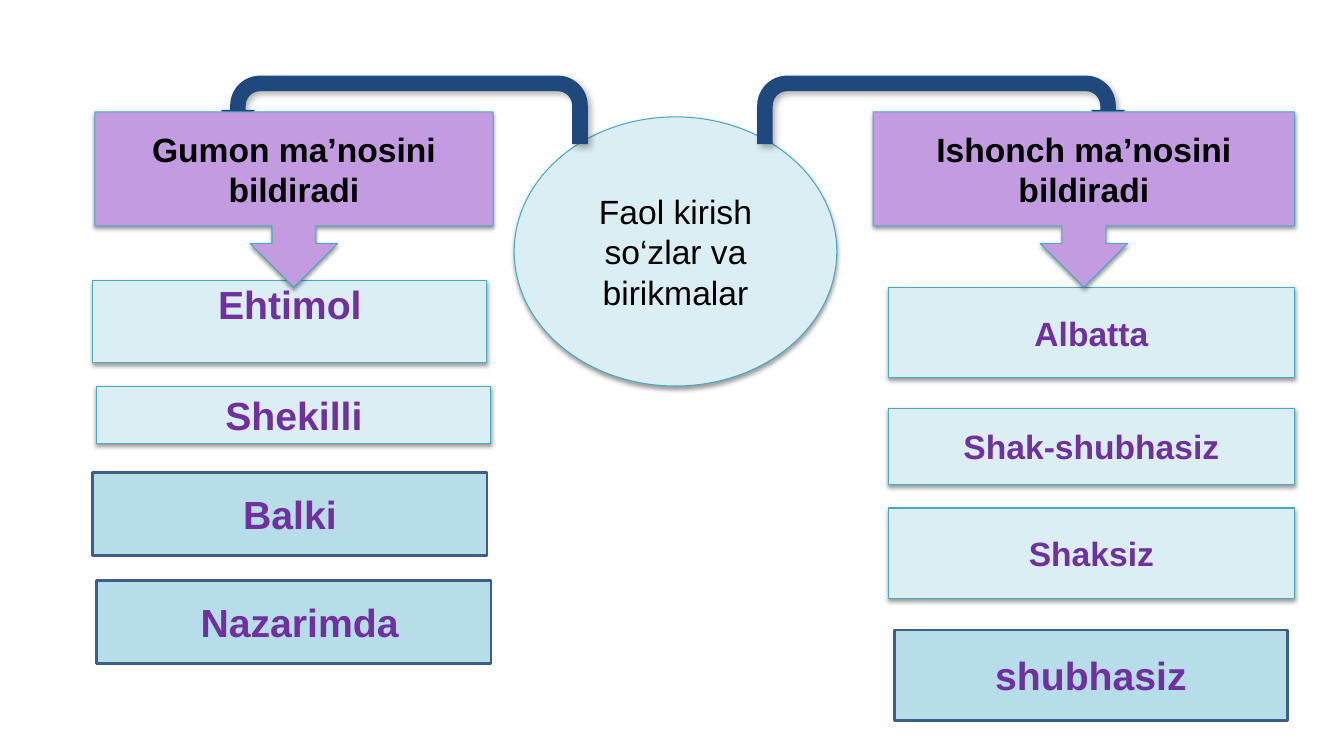
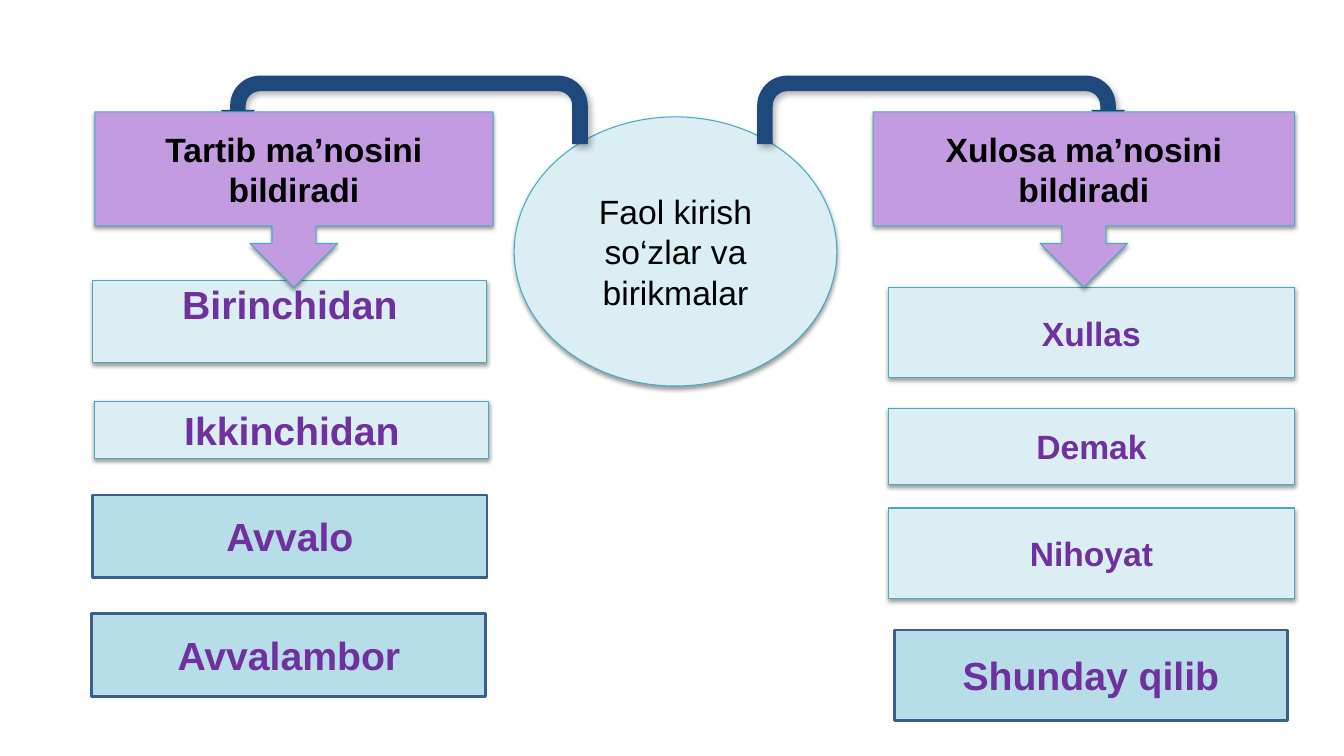
from lxml import etree
from pptx import Presentation
from pptx.dml.color import RGBColor
from pptx.enum.shapes import MSO_SHAPE
from pptx.enum.text import MSO_ANCHOR, PP_ALIGN
from pptx.oxml.ns import qn
from pptx.util import Inches, Pt

RECT, OVAL = MSO_SHAPE.RECTANGLE, MSO_SHAPE.OVAL
U_TURN, CALLOUT = MSO_SHAPE.U_TURN_ARROW, MSO_SHAPE.DOWN_ARROW_CALLOUT
CENTER, MIDDLE, TOP = PP_ALIGN.CENTER, MSO_ANCHOR.MIDDLE, MSO_ANCHOR.TOP

FONT = "Arial"
BLACK, PURPLE, NAVY = "000000", "7030A0", "1F497D"

# Shadow: opacity %, blur pt, distance pt, direction in degrees
SOFT_SHADOW = (38, 3.1, 1.6, 90)
BAND_SHADOW = (30, 4.5, 2.6, 53)

# Look: fill, line colour, line width, shadow
PALE = ("DBEEF4", "46AAC5", 0.75, SOFT_SHADOW)
DEEP = ("B7DEE8", "3A5F8C", 2, None)
LILAC = ("C39BE1", "46AAC5", 0.75, SOFT_SHADOW)
BAND = (NAVY, None, 0, BAND_SHADOW)

HUB_TEXT = "Faol kirish so‘zlar va birikmalar"
HUB = (5.1, 1.16, 3.2, 2.67)
BANDS = [((7.51, 0.75, 3.65, 0.68), False), ((2.19, 0.75, 3.64, 0.68), True)]
BAND_ADJUSTMENTS = (0.227, 0.25, 0.25, 0.438, 0.75)
HEADINGS = [(0.94, 1.11, 3.95, 1.74), (8.66, 1.11, 4.18, 1.74)]

# Word rows: height, look, text size
LEFT_ROWS = [(0.82, PALE, 28), (0.57, PALE, 28), (0.82, DEEP, 28), (0.82, DEEP, 28)]
RIGHT_ROWS = [(0.9, PALE, 24), (0.76, PALE, 24), (0.9, PALE, 24), (0.9, DEEP, 28)]
LEFT_WIDTH = 3.91
RIGHT_PLACES = [(8.81, 2.85), (8.81, 4.05), (8.81, 5.04), (8.87, 6.25)]
RIGHT_WIDTHS = [4.03, 4.03, 4.03, 3.9]

SLIDES = [
    {
        "headings": ["Gumon ma’nosini bildiradi", "Ishonch ma’nosini bildiradi"],
        "left": ["Ehtimol", "Shekilli", "Balki", "Nazarimda"],
        "left_places": [(0.92, 2.78), (0.96, 3.83), (0.92, 4.69), (0.96, 5.76)],
        "last_indent": 0.11,
        "right": ["Albatta", "Shak-shubhasiz", "Shaksiz", "shubhasiz"],
    },
    {
        "headings": ["Tartib ma’nosini bildiradi", "Xulosa ma’nosini bildiradi"],
        "left": ["Birinchidan", "Ikkinchidan", "Avvalo", "Avvalambor"],
        "left_places": [(0.92, 2.78), (0.94, 3.98), (0.92, 4.91), (0.91, 6.09)],
        "last_indent": 0,
        "right": ["Xullas", "Demak", "Nihoyat", "Shunday qilib"],
    },
]


def rgb(value):
    return RGBColor.from_string(value)


def add_shadow(shape, opacity, blur, distance, direction):
    effects = shape._element.spPr.find(qn("a:effectLst"))
    outer = etree.SubElement(
        effects, qn("a:outerShdw"), blurRad=str(Pt(blur)), dist=str(Pt(distance)),
        dir=str(direction * 60000), rotWithShape="0")
    color = etree.SubElement(outer, qn("a:srgbClr"), val=BLACK)
    etree.SubElement(color, qn("a:alpha"), val=str(opacity * 1000))


def add_figure(slide, kind, box, look):
    """Add a preset shape with its fill, line and shadow."""
    fill, line, width, shadow = look
    shape = slide.shapes.add_shape(kind, *map(Inches, box))
    shape.fill.solid()
    shape.fill.fore_color.rgb = rgb(fill)
    if line:
        shape.line.color.rgb = rgb(line)
        shape.line.width = Pt(width)
    else:
        shape.line.fill.background()
    shape.shadow.inherit = False
    if shadow:
        add_shadow(shape, *shadow)
    return shape


def write(shape, text, size, color, bold=True):
    frame = shape.text_frame
    frame.word_wrap = True
    frame.vertical_anchor = MIDDLE
    paragraph = frame.paragraphs[0]
    paragraph.alignment = CENTER
    run = paragraph.add_run()
    run.text = text
    run.font.name, run.font.size, run.font.bold = FONT, Pt(size), bold
    run.font.color.rgb = rgb(color)
    return frame


def add_words(slide, words, places, widths, rows):
    """Add one column of word boxes and return their text frames."""
    frames = []
    for word, place, width, (height, look, size) in zip(words, places, widths, rows):
        word_box = add_figure(slide, RECT, (*place, width, height), look)
        frames.append(write(word_box, word, size, PURPLE))
    return frames


def add_hub(slide):
    hub = add_figure(slide, OVAL, HUB, PALE)
    frame = write(hub, HUB_TEXT, 24, BLACK, bold=False)
    frame.margin_left = frame.margin_right = frame.margin_top = frame.margin_bottom = 0


def add_bands(slide):
    for box, mirrored in BANDS:
        band = add_figure(slide, U_TURN, box, BAND)
        for index, value in enumerate(BAND_ADJUSTMENTS):
            band.adjustments[index] = value
        if mirrored:
            band._element.spPr.find(qn("a:xfrm")).set("flipH", "1")


def build_slide(deck, content):
    slide = deck.slides.add_slide(deck.slide_layouts[6])
    left = add_words(slide, content["left"], content["left_places"],
                     [LEFT_WIDTH] * len(LEFT_ROWS), LEFT_ROWS)
    left[0].vertical_anchor = TOP
    left[0].margin_top = 0
    left[-1].margin_left = Inches(0.1 + content["last_indent"])
    add_words(slide, content["right"], RIGHT_PLACES, RIGHT_WIDTHS, RIGHT_ROWS)
    add_hub(slide)
    add_bands(slide)
    for heading, box in zip(content["headings"], HEADINGS):
        write(add_figure(slide, CALLOUT, box, LILAC), heading, 24, BLACK)


def main():
    deck = Presentation()
    deck.slide_width, deck.slide_height = Inches(13.33), Inches(7.5)
    for content in SLIDES:
        build_slide(deck, content)
    deck.save("out.pptx")


if __name__ == "__main__":
    main()
